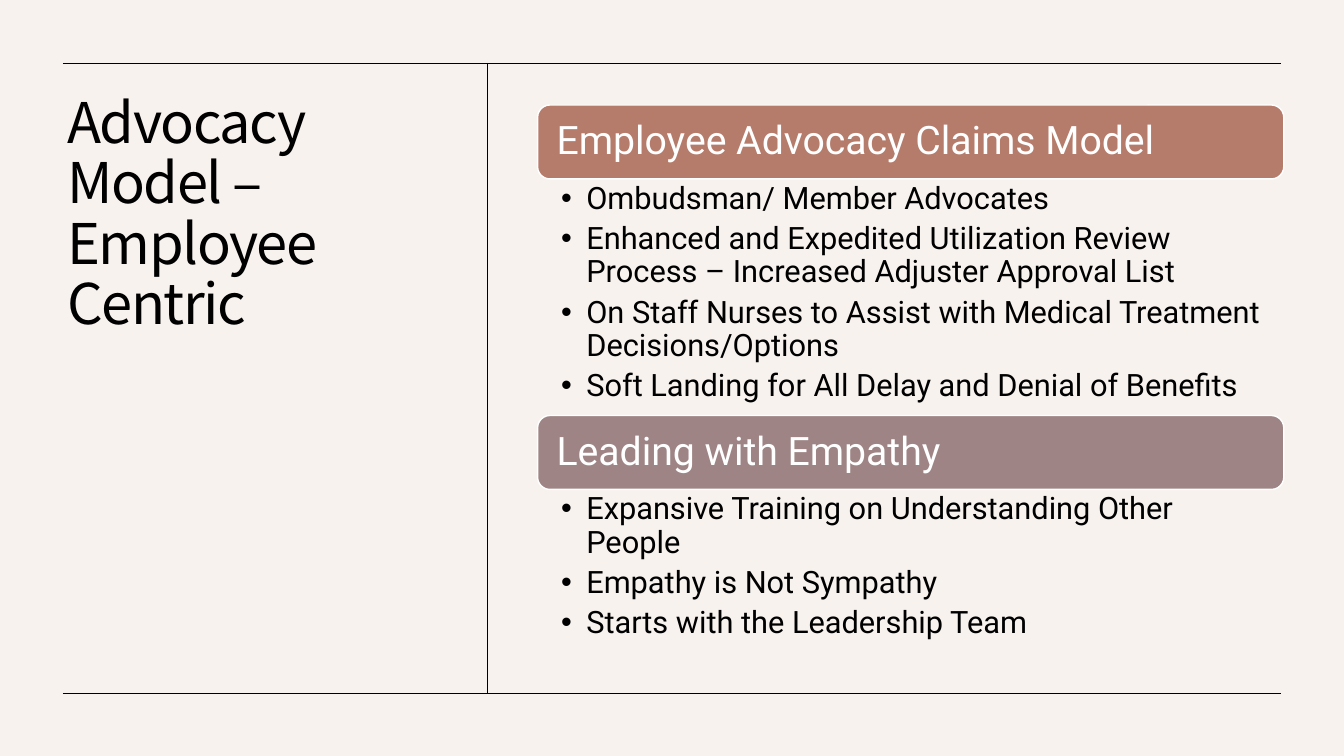
from dataclasses import dataclass

from lxml import etree
from pptx import Presentation
from pptx.dml.color import RGBColor
from pptx.enum.shapes import MSO_CONNECTOR, MSO_SHAPE
from pptx.enum.text import MSO_ANCHOR, PP_ALIGN
from pptx.oxml.ns import qn
from pptx.util import Pt

STRAIGHT = MSO_CONNECTOR.STRAIGHT
ROUNDED = MSO_SHAPE.ROUNDED_RECTANGLE
TOP, MIDDLE = MSO_ANCHOR.TOP, MSO_ANCHOR.MIDDLE
LEFT = PP_ALIGN.LEFT

TITLE_FONT, BODY_FONT = "Noto Sans CJK KR", "Roboto"
BLACK, WHITE, CREAM = "000000", "FFFFFF", "F7F2EE"

PANEL_LEFT, PANEL_TOP, PANEL_WIDTH = 384, 75, 533
HEADER_HEIGHT = 52.8
BULLET_INDENT = 18


@dataclass
class Rule:
    x1: float
    y1: float
    x2: float
    y2: float


@dataclass
class Section:
    heading: str
    color: str
    body_height: float
    points: list[str]


RULES = [
    Rule(45, 45, 915, 45),
    Rule(348, 45, 348, 495),
    Rule(45, 495, 915, 495),
]

SECTIONS = [
    Section("Employee Advocacy Claims Model", "B57B6B", 169, [
        "Ombudsman/ Member Advocates",
        "Enhanced and Expedited Utilization Review Process – Increased Adjuster Approval List",
        "On Staff Nurses to Assist with Medical Treatment Decisions/Options",
        "Soft Landing for All Delay and Denial of Benefits",
    ]),
    Section("Leading with Empathy", "9E8484", 114, [
        "Expansive Training on Understanding Other People",
        "Empathy is Not Sympathy",
        "Starts with the Leadership Team",
    ]),
]


def rgb(value: str) -> RGBColor:
    return RGBColor.from_string(value)


def set_frame(frame, anchor, left: float, top: float, right: float, bottom: float) -> None:
    frame.word_wrap = True
    frame.vertical_anchor = anchor
    frame.margin_left, frame.margin_top = Pt(left), Pt(top)
    frame.margin_right, frame.margin_bottom = Pt(right), Pt(bottom)


def add_run(paragraph, text: str, font: str, size: float, color: str):
    paragraph.alignment = LEFT
    run = paragraph.add_run()
    run.text = text
    run.font.name = font
    run.font.size = Pt(size)
    run.font.color.rgb = rgb(color)
    return run


def add_bullet(paragraph) -> None:
    properties = paragraph._p.get_or_add_pPr()
    properties.set("marL", str(Pt(BULLET_INDENT)))
    properties.set("indent", str(-Pt(BULLET_INDENT)))
    etree.SubElement(properties, qn("a:buFont")).set("typeface", "Arial")
    etree.SubElement(properties, qn("a:buChar")).set("char", "•")


def add_rule(slide, rule: Rule) -> None:
    line = slide.shapes.add_connector(
        STRAIGHT, Pt(rule.x1), Pt(rule.y1), Pt(rule.x2), Pt(rule.y2))
    line.line.color.rgb = rgb(BLACK)
    line.line.width = Pt(0.5)
    etree.SubElement(line._element.spPr, qn("a:effectLst"))


def add_title(slide, text: str) -> None:
    box = slide.shapes.add_textbox(Pt(41), Pt(62), Pt(271.5), Pt(397.5))
    set_frame(box.text_frame, TOP, 7.2, 5, 7.2, 3.6)
    paragraph = box.text_frame.paragraphs[0]
    paragraph.line_spacing = Pt(43.2)
    run = add_run(paragraph, text, TITLE_FONT, 40, BLACK)
    run.font._element.set("spc", "-100")


def add_header(slide, section: Section, top: float) -> None:
    shape = slide.shapes.add_shape(
        ROUNDED, Pt(PANEL_LEFT), Pt(top), Pt(PANEL_WIDTH), Pt(HEADER_HEIGHT))
    shape.shadow.inherit = False
    shape.fill.solid()
    shape.fill.fore_color.rgb = rgb(section.color)
    shape.line.color.rgb = rgb(WHITE)
    shape.line.width = Pt(1)
    set_frame(shape.text_frame, MIDDLE, 11, 8, 11, 8)
    paragraph = shape.text_frame.paragraphs[0]
    paragraph.line_spacing = 0.9
    add_run(paragraph, section.heading, BODY_FONT, 28, WHITE)


def add_points(slide, section: Section, top: float) -> None:
    box = slide.shapes.add_textbox(
        Pt(PANEL_LEFT), Pt(top), Pt(PANEL_WIDTH), Pt(section.body_height))
    frame = box.text_frame
    set_frame(frame, TOP, 16.8, 2.8, 15.6, 2.8)
    for index, point in enumerate(section.points):
        paragraph = frame.add_paragraph() if index else frame.paragraphs[0]
        paragraph.line_spacing = 0.9
        paragraph.space_after = Pt(5)
        add_bullet(paragraph)
        add_run(paragraph, point, BODY_FONT, 22, BLACK)


def main() -> None:
    presentation = Presentation()
    presentation.slide_width, presentation.slide_height = Pt(960), Pt(540)
    slide = presentation.slides.add_slide(presentation.slide_layouts[6])
    slide.background.fill.solid()
    slide.background.fill.fore_color.rgb = rgb(CREAM)

    # Title and frame lines
    add_title(slide, "Advocacy Model – Employee Centric")
    for rule in RULES:
        add_rule(slide, rule)

    # Sections stacked from the top of the panel
    top = PANEL_TOP
    for section in SECTIONS:
        add_header(slide, section, top)
        add_points(slide, section, top + HEADER_HEIGHT)
        top += HEADER_HEIGHT + section.body_height

    presentation.save("out.pptx")


if __name__ == "__main__":
    main()
